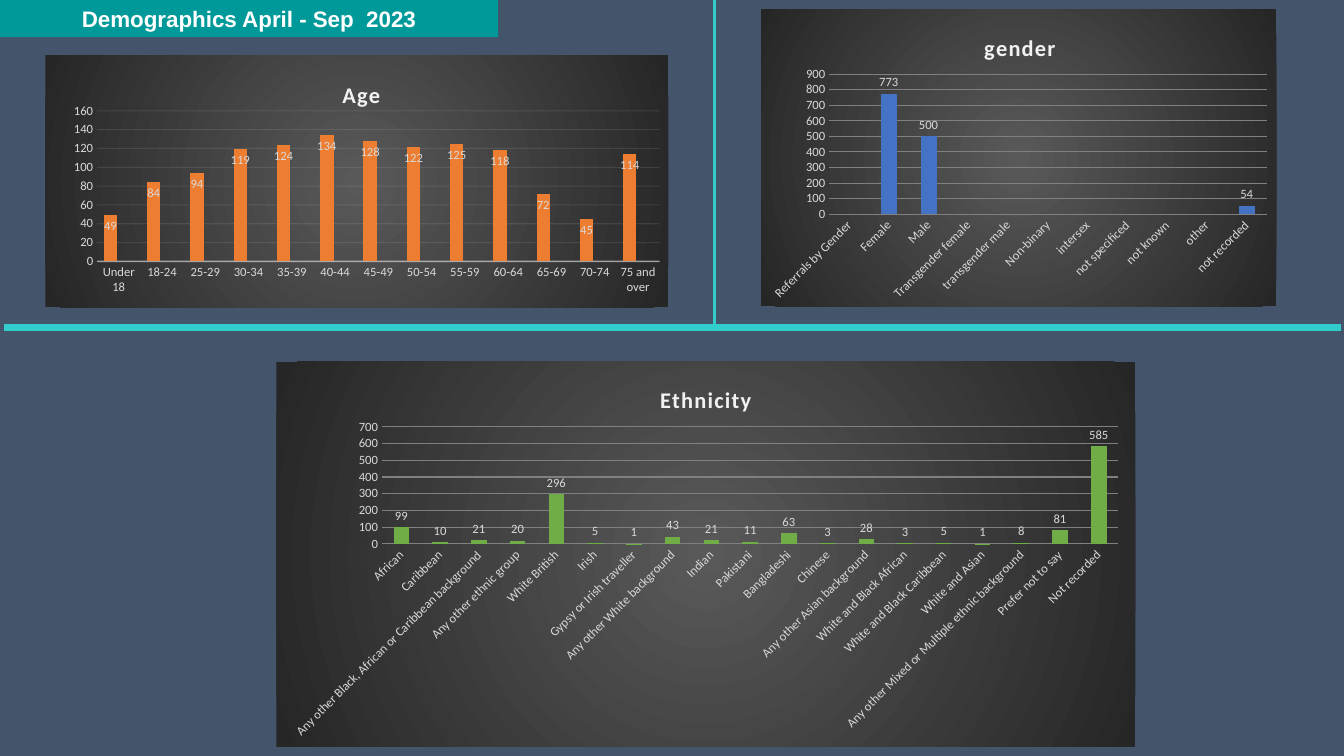
from dataclasses import dataclass

from lxml.etree import SubElement
from pptx import Presentation
from pptx.chart.data import CategoryChartData as ChartData
from pptx.dml.color import RGBColor as Color
from pptx.enum.chart import XL_CHART_TYPE as ChartType
from pptx.enum.chart import XL_LABEL_POSITION as LabelPosition
from pptx.enum.chart import XL_TICK_MARK as TickMark
from pptx.enum.shapes import MSO_CONNECTOR as Connector
from pptx.enum.shapes import MSO_SHAPE as Shape
from pptx.enum.text import MSO_ANCHOR as Anchor
from pptx.enum.text import PP_ALIGN as Align
from pptx.oxml import parse_xml
from pptx.oxml.ns import nsdecls, qn
from pptx.util import Inches, Pt


@dataclass(frozen=True)
class Theme:
    """Colours, fonts and type sizes of the slide."""
    page: str = "44546A"
    banner: str = "009999"
    rule: str = "33CCCC"
    white: str = "FFFFFF"
    title: str = "F2F2F2"
    label: str = "D9D9D9"
    grid: str = "808080"
    glow: str = "595959"
    edge: str = "262626"
    heading_font: str = "Arial"
    chart_font: str = "Calibri"
    heading_size: int = 16
    label_size: int = 9


@dataclass(frozen=True)
class Panel:
    """One chart: its places are percentages of the slide or of the chart."""
    title: str
    box: tuple
    title_at: tuple
    plot: tuple
    categories: tuple
    series: tuple
    top: int
    step: int
    gap: int
    overlap: int = 0
    angle: int = -45
    label_position: LabelPosition = LabelPosition.OUTSIDE_END
    faint: bool = False


THEME = Theme()
WIDTH, HEIGHT = Inches(13.33), Inches(7.5)

AGE = Panel(
    "Age", (3.38, 7.33, 46.36, 33.33), (47, 8), (8.3, 22, 90.3, 59.8),
    ("Under 18", "18-24", "25-29", "30-34", "35-39", "40-44", "45-49",
     "50-54", "55-59", "60-64", "65-69", "70-74", "75 and over"),
    (("646464", ()),
     ("ED7D31", (49, 84, 94, 119, 124, 134, 128, 122, 125, 118, 72, 45, 114)),
     ("8C8C8C", (None,) * 13)),
    160, 20, 100, -24, 0, LabelPosition.INSIDE_END, True)
GENDER = Panel(
    "gender", (56.64, 1.2, 38.33, 39.33), (42.5, 6.7), (13.2, 21.9, 84.9, 47.1),
    ("Referrals by Gender", "Female", "Male", "Transgender female",
     "transgender male", "Non-binary", "intersex", "not specificed",
     "not known", "other", "not recorded"),
    (("3E70CA", ()),
     ("4472C4", (None, 773, 500) + (None,) * 7 + (54,))),
    900, 100, 150)
ETHNICITY = Panel(
    "Ethnicity", (20.56, 47.87, 63.92, 50.93), (44.2, 5), (12.3, 16.9, 85.7, 30.4),
    ("African", "Caribbean", "Any other Black, African or Caribbean background",
     "Any other ethnic group", "White British", "Irish",
     "Gypsy or Irish traveller", "Any other White background", "Indian",
     "Pakistani", "Bangladeshi", "Chinese", "Any other Asian background",
     "White and Black African", "White and Black Caribbean", "White and Asian",
     "Any other Mixed or Multiple ethnic background", "Prefer not to say",
     "Not recorded"),
    (("70AD47", (99, 10, 21, 20, 296, 5, 1, 43, 21, 11, 63, 3, 28, 3, 5, 1, 8, 81, 585)),),
    700, 100, 150)


def place(box):
    """Turn left, top, width, height percentages into slide lengths."""
    return [int(share * side / 100) for share, side in zip(box, (WIDTH, HEIGHT) * 2)]


def style_font(font, size, color, name, bold=False):
    """Set the face of a font."""
    font.size, font.name, font.bold = Pt(size), name, bold
    font.color.rgb = Color.from_string(color)


def set_layout(parent, position, shares, inner=False):
    """Fix the place of a chart part by percentages of the chart."""
    for old in parent.findall(qn("c:layout")):
        parent.remove(old)
    layout = parse_xml(f"<c:layout {nsdecls('c')}><c:manualLayout/></c:layout>")
    settings = [("layoutTarget", "inner")] if inner else []
    settings += [("xMode", "edge"), ("yMode", "edge")]
    settings += [(key, str(round(share / 100, 3))) for key, share in zip("xywh", shares)]
    for key, value in settings:
        SubElement(layout[0], qn(f"c:{key}")).set("val", value)
    parent.insert(position, layout)


def style_line(line, color, width, opacity=100):
    """Colour a chart line and set its opacity."""
    line.color.rgb = Color.from_string(color)
    line.width = Pt(width)
    if opacity < 100:
        for fill in line.fill._xPr.iter(qn("a:srgbClr")):
            SubElement(fill, qn("a:alpha")).set("val", str(opacity * 1000))


def fill_chart(chart):
    """Give the chart area a radial gradient."""
    area = parse_xml(
        f"<c:spPr {nsdecls('c', 'a')}><a:gradFill><a:gsLst>"
        f'<a:gs pos="0"><a:srgbClr val="{THEME.glow}"/></a:gs>'
        f'<a:gs pos="100000"><a:srgbClr val="{THEME.edge}"/></a:gs></a:gsLst>'
        '<a:path path="circle"><a:fillToRect l="50000" t="50000" r="50000" b="50000"/>'
        "</a:path></a:gradFill><a:ln><a:noFill/></a:ln></c:spPr>")
    chart._chartSpace.find(qn("c:chart")).addnext(area)


def style_axes(chart, panel):
    """Format both axes and the gridlines."""
    for axis in (chart.category_axis, chart.value_axis):
        axis.major_tick_mark = axis.minor_tick_mark = TickMark.NONE
        style_font(axis.tick_labels.font, THEME.label_size, THEME.label, THEME.chart_font)
        axis.format.line.fill.background()
    names, values = chart.category_axis, chart.value_axis
    names._element.find(qn("c:txPr")).find(qn("a:bodyPr")).set("rot", str(panel.angle * 60000))
    values.minimum_scale, values.maximum_scale = 0, panel.top
    values.major_unit = panel.step
    gridline = values.major_gridlines.format.line
    if panel.faint:
        style_line(names.format.line, THEME.title, 1, 54)
        style_line(gridline, THEME.title, 0.75, 10)
    else:
        style_line(gridline, THEME.grid, 0.75)


def style_series(plot, panel):
    """Colour and label the columns."""
    plot.gap_width, plot.overlap = panel.gap, panel.overlap
    plot.vary_by_categories = False
    for series, (color, values) in zip(plot.series, panel.series):
        series.format.fill.solid()
        series.format.fill.fore_color.rgb = Color.from_string(color)
        labels = series.data_labels
        labels.show_value, labels.position = True, panel.label_position
        style_font(labels.font, THEME.label_size, THEME.label, THEME.chart_font)
        if not values:
            series._element.remove(series._element.find(qn("c:val")))


def add_panel(page, panel):
    """Draw one column chart in its box."""
    data = ChartData()
    data.categories = panel.categories
    for number, (_, values) in enumerate(panel.series, 1):
        data.add_series(f"Series {number}", values)
    chart = page.shapes.add_chart(ChartType.COLUMN_CLUSTERED, *place(panel.box), data).chart
    style_font(chart.font, 10, THEME.label, THEME.chart_font)
    chart.has_legend = False
    fill_chart(chart)
    span = chart.chart_title.text_frame.paragraphs[0].add_run()
    span.text = panel.title
    style_font(span.font, THEME.heading_size, THEME.title, THEME.chart_font, True)
    span.font._element.set("spc", "100")
    style_axes(chart, panel)
    style_series(chart.plots[0], panel)
    set_layout(chart.chart_title._element, 1, panel.title_at)
    set_layout(chart._chartSpace.find(qn("c:chart")).find(qn("c:plotArea")), 0, panel.plot, True)


def add_banner(page, box):
    """Draw the heading banner."""
    banner = page.shapes.add_shape(Shape.RECTANGLE, *place(box))
    banner.shadow.inherit = False
    banner.fill.solid()
    banner.fill.fore_color.rgb = Color.from_string(THEME.banner)
    banner.line.fill.background()
    banner.text_frame.vertical_anchor = Anchor.MIDDLE
    para = banner.text_frame.paragraphs[0]
    para.alignment = Align.CENTER
    span = para.add_run()
    span.text = "Demographics April - Sep  2023"
    style_font(span.font, THEME.heading_size, THEME.white, THEME.heading_font, True)


def add_rule(page, ends, width):
    """Draw a dividing line."""
    rule = page.shapes.add_connector(Connector.STRAIGHT, *place(ends))
    style_line(rule.line, THEME.rule, width)
    SubElement(rule._element.spPr, qn("a:effectLst"))


def main():
    """Build and save the deck."""
    deck = Presentation()
    deck.slide_width, deck.slide_height = WIDTH, HEIGHT
    page = deck.slides.add_slide(deck.slide_layouts[6])
    page.background.fill.solid()
    page.background.fill.fore_color.rgb = Color.from_string(THEME.page)
    add_banner(page, (0, 0, 37.06, 4.93))
    add_rule(page, (53.19, 0, 53.19, 43.33), 2.25)
    add_rule(page, (99.77, 43.33, 0.3, 43.33), 4.5)
    for panel in (AGE, GENDER, ETHNICITY):
        add_panel(page, panel)
    deck.save("out.pptx")


if __name__ == "__main__":
    main()
